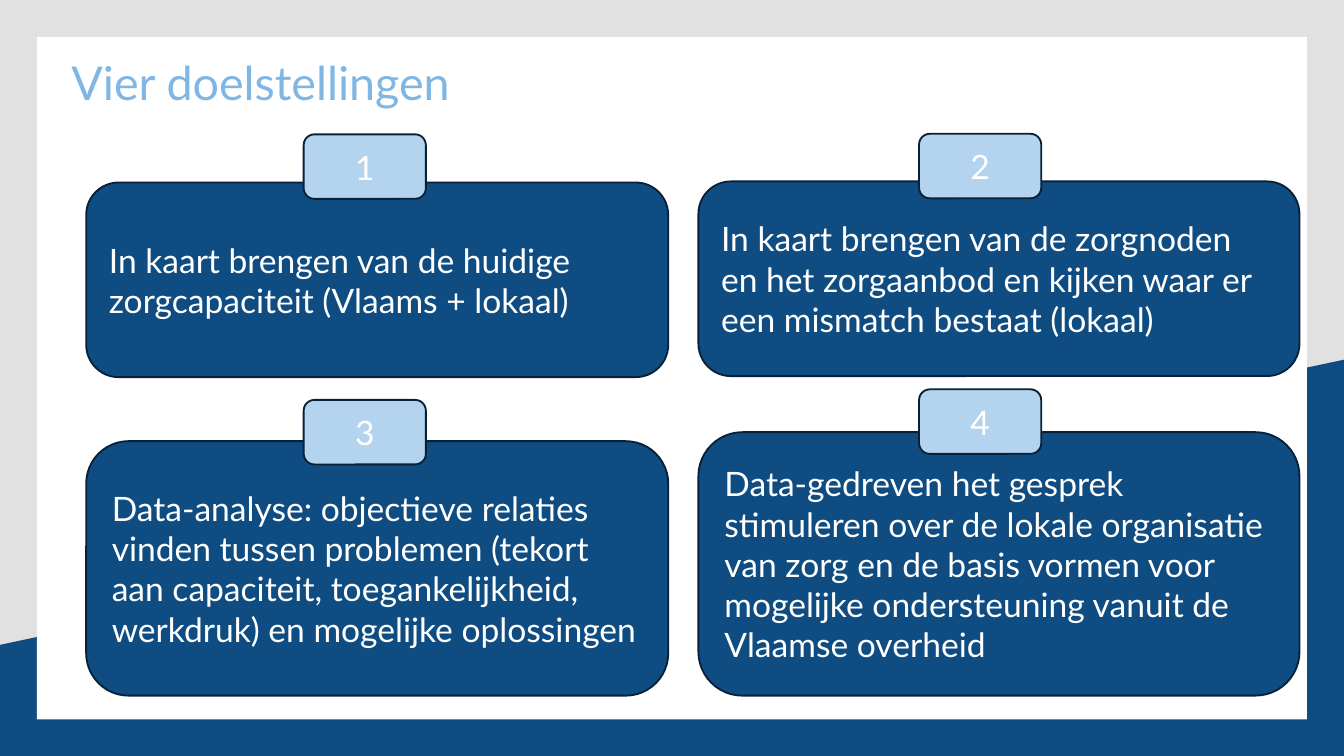
"""Build the slide with the four objectives as numbered cards."""
import pptx
import pptx.dml.color
import pptx.enum.shapes
import pptx.enum.text
import pptx.util

Cm = pptx.util.Cm
Pt = pptx.util.Pt
RGBColor = pptx.dml.color.RGBColor
SHAPE = pptx.enum.shapes.MSO_SHAPE
ALIGN = pptx.enum.text.PP_ALIGN
ANCHOR = pptx.enum.text.MSO_ANCHOR

GREY = RGBColor(0xE1, 0xE1, 0xE1)
NAVY = RGBColor(0x0F, 0x4C, 0x81)
OUTLINE = RGBColor(0x07, 0x21, 0x39)
SKY = RGBColor(0x80, 0xB6, 0xE4)
PALE = RGBColor(0xB3, 0xD3, 0xEF)
WHITE = RGBColor(0xFF, 0xFF, 0xFF)

SLIDE_WIDTH, SLIDE_HEIGHT = 25.4, 14.29
BADGE_WIDTH, BADGE_HEIGHT = 2.31, 1.22
LEFT_COLUMN = {"card_left": 1.63, "card_width": 11, "badge_left": 5.74}
RIGHT_COLUMN = {"card_left": 13.2, "card_width": 11.36, "badge_left": 17.37}

OBJECTIVES = [
    (LEFT_COLUMN, 3.45, 3.68, 2.54,
     "In kaart brengen van de huidige zorgcapaciteit (Vlaams + lokaal)"),
    (RIGHT_COLUMN, 3.43, 3.68, 2.53,
     "In kaart brengen van de zorgnoden en het zorgaanbod en kijken "
     "waar er een mismatch bestaat (lokaal)"),
    (LEFT_COLUMN, 8.34, 4.81, 7.56,
     "Data-analyse: objectieve relaties vinden tussen problemen (tekort aan "
     "capaciteit, toegankelijkheid, werkdruk) en mogelijke oplossingen"),
    (RIGHT_COLUMN, 8.17, 4.98, 7.36,
     "Data-gedreven het gesprek stimuleren over de lokale organisatie van zorg "
     "en de basis vormen voor mogelijke ondersteuning vanuit de Vlaamse overheid"),
]


def apply_format(target, values):
    """Set every attribute named in values on target."""
    for name, value in values.items():
        setattr(target, name, value)


def write_text(frame, wording, size, color, frame_format, paragraph_format):
    """Write one formatted paragraph into a text frame."""
    apply_format(frame, {"word_wrap": True, **frame_format})
    paragraph = frame.paragraphs[0]
    apply_format(paragraph, paragraph_format)
    run = paragraph.add_run()
    run.text = wording
    apply_format(run.font, {"name": "Lato", "size": Pt(size)})
    run.font.color.rgb = color


def paint(shape, fill, outline=None):
    """Give a shape a solid fill, an optional outline and no shadow."""
    shape.shadow.inherit = False
    shape.fill.solid()
    shape.fill.fore_color.rgb = fill
    if outline is None:
        shape.line.fill.background()
    else:
        shape.line.color.rgb = outline
        shape.line.width = Pt(1)


def add_backdrop(slide):
    """Draw the grey ground, the slanted navy wedge and the white sheet."""
    slide.background.fill.solid()
    slide.background.fill.fore_color.rgb = GREY
    corners = [(SLIDE_WIDTH, 6.8), (SLIDE_WIDTH, SLIDE_HEIGHT),
               (0, SLIDE_HEIGHT), (0, 12.19)]
    points = [(Cm(x), Cm(y)) for x, y in corners]
    outline = slide.shapes.build_freeform(*points[0])
    outline.add_line_segments(points[1:], close=True)
    paint(outline.convert_to_shape(), NAVY)
    sheet = slide.shapes.add_shape(
        SHAPE.RECTANGLE, Cm(0.7), Cm(0.7), Cm(24), Cm(12.9))
    paint(sheet, WHITE)


def add_title(slide, wording):
    """Add the slide heading."""
    heading = slide.shapes.add_textbox(Cm(1.35), Cm(1.14), Cm(19.18), Cm(1.78))
    margins = dict.fromkeys(
        ["margin_left", "margin_top", "margin_right", "margin_bottom"], 0)
    write_text(heading.text_frame, wording, 25, SKY, margins, {"line_spacing": 0.9})


def add_rounded_box(slide, bounds, fill, wording, alignment):
    """Add an outlined rounded box with vertically centred white text."""
    box = slide.shapes.add_shape(SHAPE.ROUNDED_RECTANGLE, *map(Cm, bounds))
    paint(box, fill, OUTLINE)
    write_text(box.text_frame, wording, 18, WHITE,
               {"vertical_anchor": ANCHOR.MIDDLE}, {"alignment": alignment})


def add_objective(slide, number, column, card_top, card_height, badge_top, wording):
    """Add an objective card with its number badge on top."""
    card = (column["card_left"], card_top, column["card_width"], card_height)
    badge = (column["badge_left"], badge_top, BADGE_WIDTH, BADGE_HEIGHT)
    add_rounded_box(slide, card, NAVY, wording, ALIGN.LEFT)
    add_rounded_box(slide, badge, PALE, str(number), ALIGN.CENTER)


def main():
    """Build and save the presentation."""
    presentation = pptx.Presentation()
    apply_format(presentation, {"slide_width": Cm(SLIDE_WIDTH),
                                "slide_height": Cm(SLIDE_HEIGHT)})
    slide = presentation.slides.add_slide(presentation.slide_layouts[6])
    add_backdrop(slide)
    add_title(slide, "Vier doelstellingen")
    for number, objective in enumerate(OBJECTIVES, start=1):
        add_objective(slide, number, *objective)
    presentation.save("out.pptx")


if __name__ == "__main__":
    main()
